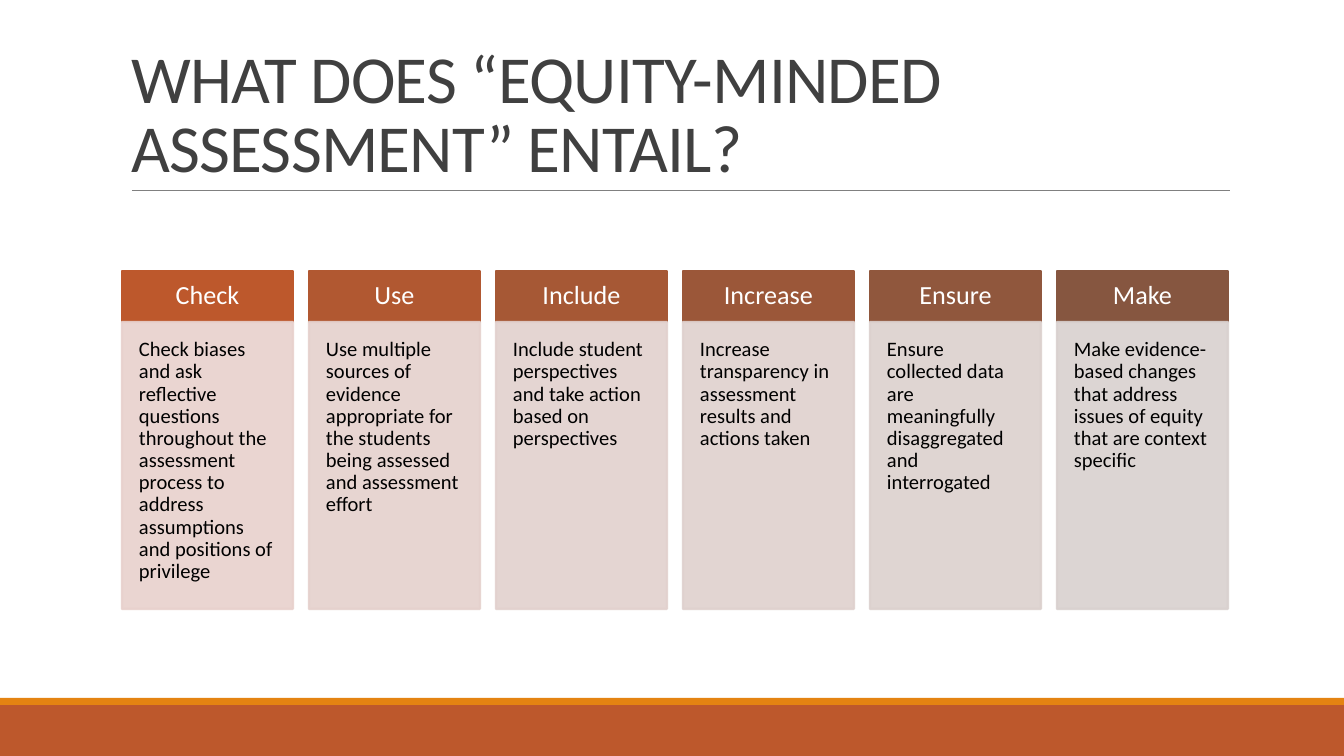
from typing import NamedTuple

from lxml import etree
from pptx import Presentation
from pptx import util as u
from pptx.dml.color import RGBColor
from pptx.enum import shapes, text
from pptx.oxml.ns import qn

PX = 914400 * 10 / 1344  # EMU per px
FONT = "Calibri"
WHITE = RGBColor(0xFF, 0xFF, 0xFF)
BLACK = RGBColor(0, 0, 0)
GRAY = RGBColor(0x80, 0x80, 0x80)
DARK = RGBColor(0x40, 0x40, 0x40)
RUST = RGBColor(0xBD, 0x58, 0x2C)
AMBER = RGBColor(0xE4, 0x83, 0x12)

LEFT, STEP, WIDE = 122, 187, 171
HEAD_Y, HEAD_H, BODY_H = 271, 51, 287


class Box(NamedTuple):
    x: int
    y: int
    w: int
    h: int


class Column(NamedTuple):
    head: str
    body: str
    dark: RGBColor
    pale: RGBColor


class Style(NamedTuple):
    size: int
    color: RGBColor
    inset: int
    align: text.PP_ALIGN
    anchor: text.MSO_ANCHOR


HEAD = Style(14, WHITE, 13, text.PP_ALIGN.CENTER, text.MSO_ANCHOR.MIDDLE)
BODY = Style(11, BLACK, 17, text.PP_ALIGN.LEFT, text.MSO_ANCHOR.TOP)

COLUMNS = [
    Column("Check", "Check biases and ask reflective questions throughout the assessment "
           "process to address assumptions and positions of privilege",
           RUST, RGBColor(0xE8, 0xD1, 0xCD)),
    Column("Use", "Use multiple sources of evidence appropriate for the students "
           "being assessed and assessment effort",
           RGBColor(0xB1, 0x58, 0x31), RGBColor(0xE5, 0xD1, 0xCD)),
    Column("Include", "Include student perspectives and take action based on perspectives",
           RGBColor(0xA6, 0x58, 0x35), RGBColor(0xE2, 0xD1, 0xCE)),
    Column("Increase", "Increase transparency in assessment results and actions taken",
           RGBColor(0x9B, 0x57, 0x39), RGBColor(0xDF, 0xD1, 0xCE)),
    Column("Ensure", "Ensure collected data are meaningfully disaggregated and interrogated",
           RGBColor(0x90, 0x57, 0x3D), RGBColor(0xDC, 0xD1, 0xCE)),
    Column("Make", "Make evidence-based changes that address issues of equity "
           "that are context specific",
           RGBColor(0x86, 0x56, 0x40), RGBColor(0xD9, 0xD1, 0xCF)),
]


def px(n: int) -> u.Emu:
    return u.Emu(round(n * PX))


def add_rect(slide, box: Box, color: RGBColor):
    rect = slide.shapes.add_shape(shapes.MSO_SHAPE.RECTANGLE, *map(px, box))
    rect.shadow.inherit = False
    rect.fill.solid()
    rect.fill.fore_color.rgb = color
    rect.line.fill.background()
    return rect


def set_text(shape, words: str, style: Style, lead: float = 0.9):
    frame = shape.text_frame
    frame.text = words
    frame.word_wrap = True
    frame.vertical_anchor = style.anchor
    frame.margin_left = frame.margin_right = px(style.inset)
    frame.margin_top = frame.margin_bottom = px(style.inset)
    par = frame.paragraphs[0]
    par.alignment = style.align
    par.line_spacing = lead
    run = par.runs[0]
    run.font.name = FONT
    run.font.size = u.Pt(style.size)
    run.font.color.rgb = style.color
    return run


def add_card(slide, box: Box, color: RGBColor, words: str, style: Style, alpha: int = 100) -> None:
    card = add_rect(slide, box, color)
    card.line.color.rgb = color
    card.line.width = u.Pt(1.25)
    if alpha < 100:
        # Fill and outline share one transparency
        for tint in card._element.spPr.iter(qn("a:srgbClr")):
            etree.SubElement(tint, qn("a:alpha"), val=str(alpha * 1000))
    set_text(card, words, style)


def add_title(slide, box: Box, words: str) -> None:
    title = slide.shapes.title
    title.left, title.top, title.width, title.height = map(px, box)
    style = Style(36, DARK, 10, text.PP_ALIGN.LEFT, text.MSO_ANCHOR.BOTTOM)
    run = set_text(title, words, style, 0.85)
    frame = title.text_frame
    frame.auto_size = text.MSO_AUTO_SIZE.NONE
    frame.margin_top = frame.margin_bottom = px(6)
    run._r.get_or_add_rPr().set("spc", "-40")


def add_rule(slide, x1: int, x2: int, y: int) -> None:
    rule = slide.shapes.add_connector(
        shapes.MSO_CONNECTOR.STRAIGHT, px(x1), px(y), px(x2), px(y))
    rule.line.color.rgb = GRAY
    rule.line.width = u.Pt(0.5)
    etree.SubElement(rule._element.spPr, qn("a:effectLst"))


def main() -> None:
    deck = Presentation()
    deck.slide_width, deck.slide_height = px(1344), px(756)
    slide = deck.slides.add_slide(deck.slide_layouts[5])

    # Footer bands
    add_rect(slide, Box(0, 705, 1344, 51), RUST)
    add_rect(slide, Box(0, 698, 1344, 7), AMBER)

    # Title and rule
    add_title(slide, Box(121, 32, 1109, 160), "WHAT DOES “EQUITY-MINDED ASSESSMENT” ENTAIL?")
    add_rule(slide, 132, 1230, 191)

    # Columns: heading over body
    for i, col in enumerate(COLUMNS):
        x = LEFT + i * STEP
        add_card(slide, Box(x, HEAD_Y, WIDE, HEAD_H), col.dark, col.head, HEAD)
        add_card(slide, Box(x, HEAD_Y + HEAD_H, WIDE, BODY_H), col.pale, col.body, BODY, 90)

    deck.save("out.pptx")


if __name__ == "__main__":
    main()
